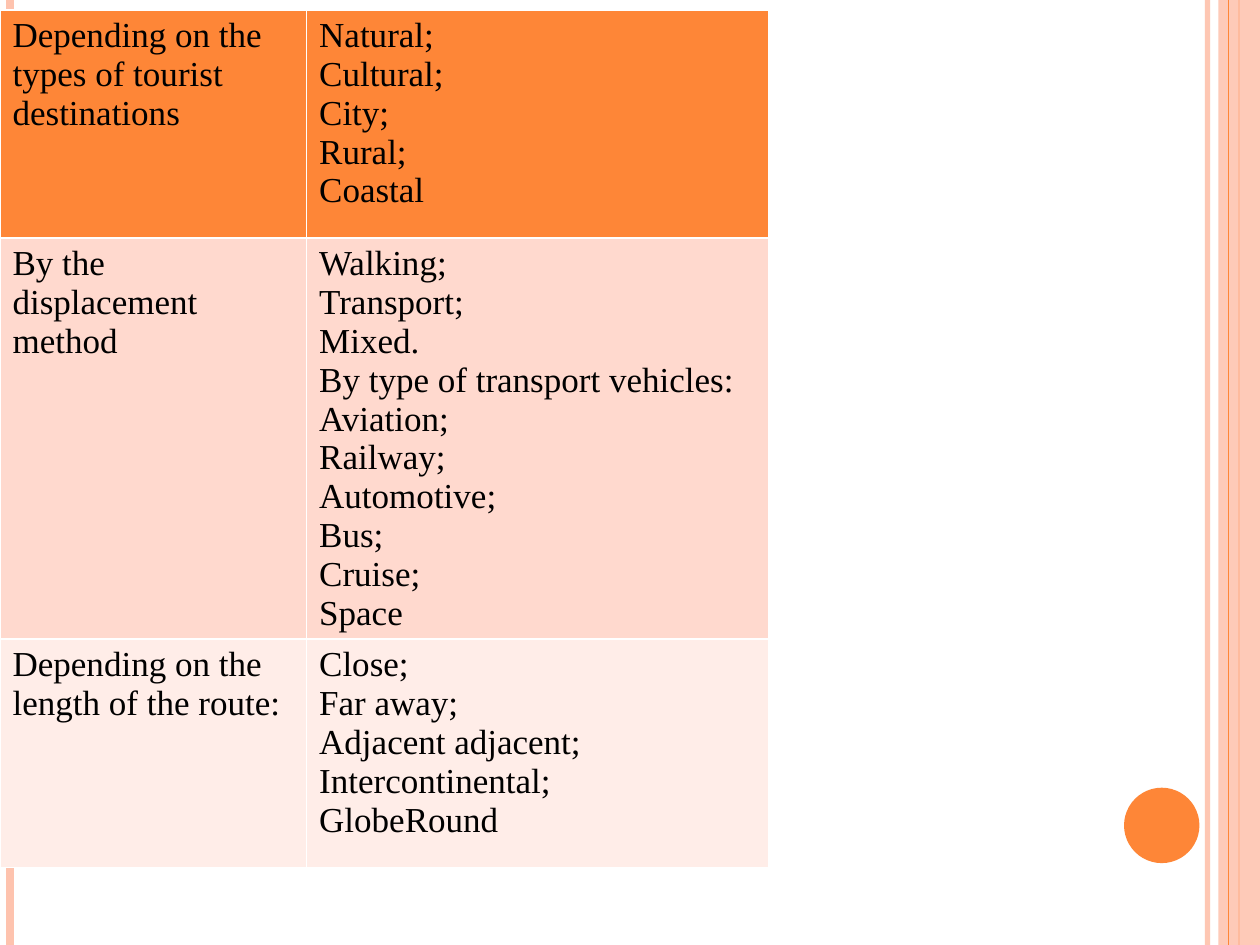
from lxml import etree
from pptx import Presentation
from pptx import util as u
from pptx.dml import color
from pptx.enum import shapes, text
from pptx.oxml import ns

ORANGE, PINK, WHITE = "FE8637", "FEC3AE", "FFFFFF"
PAGE_WIDTH, PAGE_HEIGHT = 25.4, 19.05
COLUMN_WIDTHS = [6.18, 9.31]
ROWS = [
    (4.6, ORANGE, "Depending on the types of tourist destinations",
     ["Natural;", "Cultural;", "City;", "Rural;", "Coastal"]),
    (7.92, "FFD9CE", "By the displacement method",
     ["Walking;", "Transport;", "Mixed.", "By type of transport vehicles:",
      "Aviation;", "Railway;", "Automotive;", "Bus;", "Cruise;", "Space"]),
    (4.6, "FFEDE8", "Depending on the length of the route:",
     ["Close;", "Far away;", "Adjacent adjacent;", "Intercontinental;",
      "GlobeRound"]),
]


def rgb(value):
    return color.RGBColor.from_string(value)


def set_opacity(shape, percent):
    for node in shape.element.spPr.iter(ns.qn("a:srgbClr")):
        etree.SubElement(node, ns.qn("a:alpha"), val=str(percent * 1000))


class SlideBuilder:
    font_format = {"name": "Times New Roman", "size": u.Pt(20),
                   "bold": False}
    text_color = "000000"
    border_width = u.Pt(1)

    def __init__(self, slide):
        self.slide = slide
        slide.background.fill.solid()
        slide.background.fill.fore_color.rgb = rgb(WHITE)

    def vertical_line(self, x, line_color, width, opacity=100):
        connector = self.slide.shapes.add_connector(
            shapes.MSO_CONNECTOR.STRAIGHT,
            u.Cm(x), u.Cm(0), u.Cm(x), u.Cm(PAGE_HEIGHT))
        connector.line.color.rgb = rgb(line_color)
        connector.line.width = u.Pt(width)
        etree.SubElement(connector.element.spPr, ns.qn("a:effectLst"))
        if opacity < 100:
            set_opacity(connector, opacity)

    def filled_shape(self, kind, left, top, width, height, fill, opacity=100):
        shape = self.slide.shapes.add_shape(
            kind, u.Cm(left), u.Cm(top), u.Cm(width), u.Cm(height))
        shape.shadow.inherit = False
        shape.fill.solid()
        shape.fill.fore_color.rgb = rgb(fill)
        shape.line.fill.background()
        if opacity < 100:
            set_opacity(shape, opacity)

    def table(self, left, top, column_widths, rows):
        height = sum(row[0] for row in rows)
        table = self.slide.shapes.add_table(
            len(rows), len(column_widths), u.Cm(left), u.Cm(top),
            u.Cm(sum(column_widths)), u.Cm(height)).table
        for column, width in zip(table.columns, column_widths):
            column.width = u.Cm(width)
        for index, (row_height, fill, heading, items) in enumerate(rows):
            table.rows[index].height = u.Cm(row_height)
            for column, lines in enumerate([[heading], items]):
                self.cell(table.cell(index, column), lines, fill)

    def cell(self, cell, lines, fill):
        cell.fill.solid()
        cell.fill.fore_color.rgb = rgb(fill)
        cell.vertical_anchor = text.MSO_ANCHOR.TOP
        cell.text_frame.text = "\n".join(lines)
        for paragraph in cell.text_frame.paragraphs:
            for run in paragraph.runs:
                for name, value in self.font_format.items():
                    setattr(run.font, name, value)
                run.font.color.rgb = rgb(self.text_color)
        self.borders(cell)

    def borders(self, cell):
        properties = cell._tc.get_or_add_tcPr()
        for position, side in enumerate("LRTB"):
            border = etree.Element(ns.qn(f"a:ln{side}"),
                                   w=str(self.border_width))
            fill = etree.SubElement(border, ns.qn("a:solidFill"))
            etree.SubElement(fill, ns.qn("a:srgbClr"), val=WHITE)
            properties.insert(position, border)


def main():
    presentation = Presentation()
    presentation.slide_width = u.Cm(PAGE_WIDTH)
    presentation.slide_height = u.Cm(PAGE_HEIGHT)
    builder = SlideBuilder(
        presentation.slides.add_slide(presentation.slide_layouts[6]))
    builder.vertical_line(24.34, PINK, 3, opacity=93)
    builder.vertical_line(0.21, PINK, 4.5)
    builder.vertical_line(24.98, ORANGE, 1.5)
    builder.filled_shape(shapes.MSO_SHAPE.RECTANGLE,
                         24.56, 0, 0.84, PAGE_HEIGHT, PINK, opacity=87)
    builder.vertical_line(24.77, ORANGE, 0.75)
    builder.filled_shape(shapes.MSO_SHAPE.OVAL,
                         22.66, 15.88, 1.52, 1.52, ORANGE)
    builder.table(0, 0.2, COLUMN_WIDTHS, ROWS)
    presentation.save("out.pptx")


if __name__ == "__main__":
    main()
